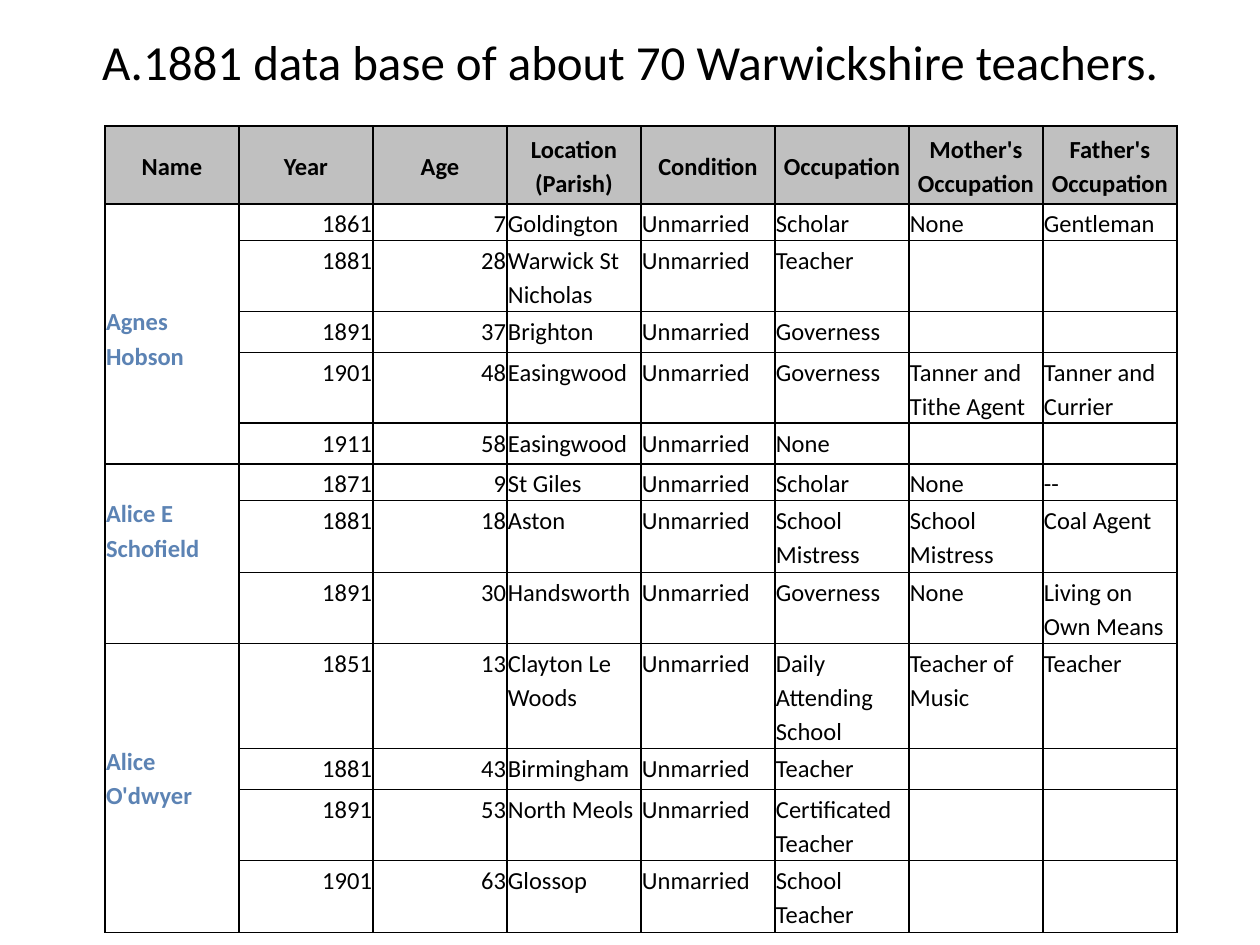
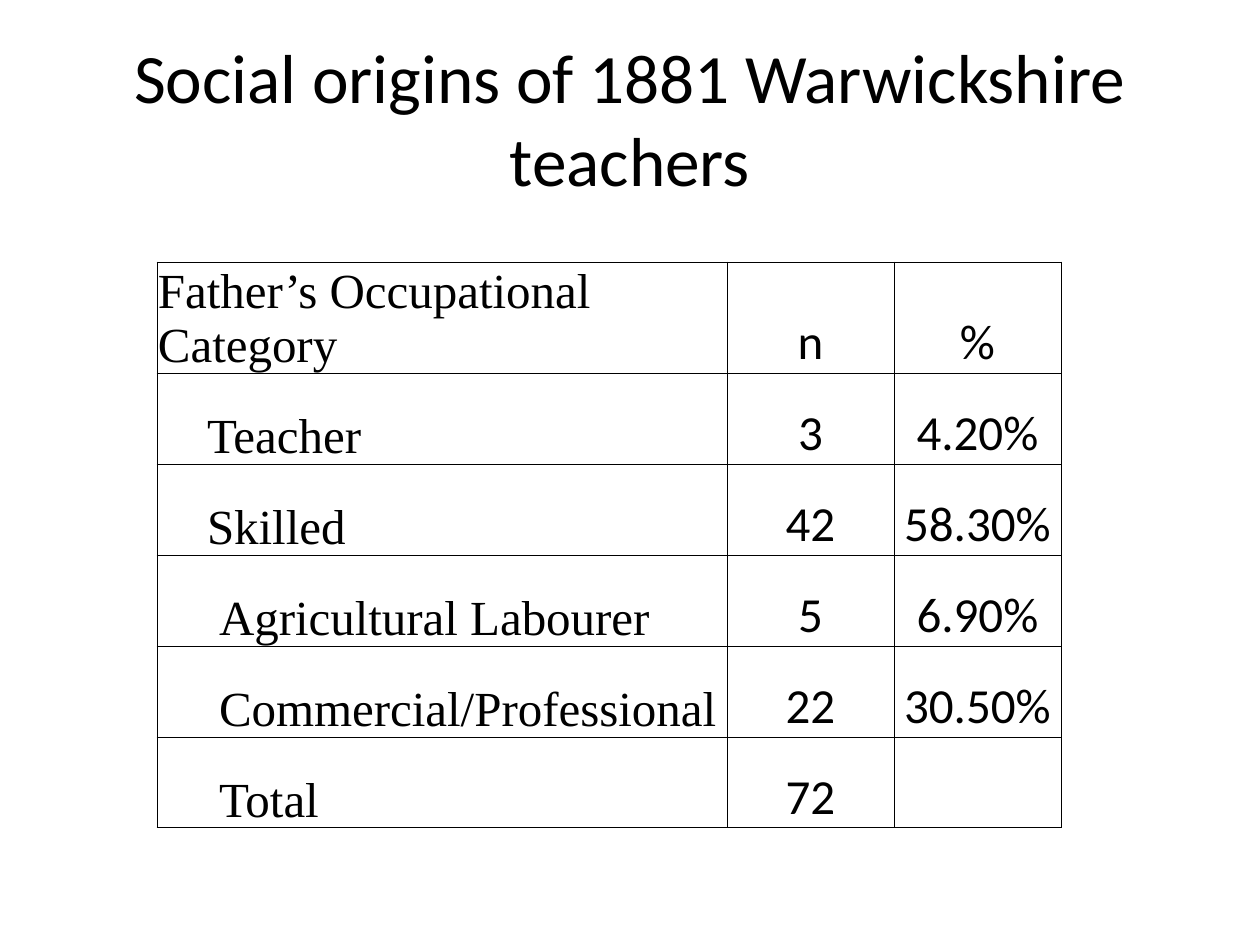
from dataclasses import dataclass

from lxml import etree
from pptx import Presentation
from pptx.dml.color import RGBColor
from pptx.enum.text import MSO_ANCHOR, MSO_AUTO_SIZE, PP_ALIGN
from pptx.oxml.ns import qn
from pptx.util import Pt

LEFT, CENTER, RIGHT = PP_ALIGN.LEFT, PP_ALIGN.CENTER, PP_ALIGN.RIGHT
TOP, MIDDLE, BOTTOM = MSO_ANCHOR.TOP, MSO_ANCHOR.MIDDLE, MSO_ANCHOR.BOTTOM
NO_AUTOFIT = MSO_AUTO_SIZE.NONE
EMU_PER_PX = 914400 / 126
TITLE_ONLY = 5


@dataclass(frozen=True)
class Theme:
    """Colours, fonts and type sizes of the deck."""
    ink: str = "000000"
    paper: str = "FFFFFF"
    header: str = "C0C0C0"
    teacher: str = "5C83B4"
    sans: str = "Calibri"
    serif: str = "Times New Roman"
    long_title: float = 28
    title: float = 39.6
    record: float = 14
    figure: float = 28
    record_spacing: float = 1.15
    record_border: float = 1
    figure_border: float = 0.5


THEME = Theme()

RECORD_HEADERS = ["Name", "Year", "Age", "Location (Parish)", "Condition",
                  "Occupation", "Mother's Occupation", "Father's Occupation"]
RECORD_ALIGNS = [LEFT, RIGHT, RIGHT] + [LEFT] * 5
CAREERS = [
    ("Agnes Hobson", 98, [
        ("1861", "7", "Goldington", "Unmarried", "Scholar", "None", "Gentleman"),
        ("1881", "28", "Warwick St Nicholas", "Unmarried", "Teacher", "", ""),
        ("1891", "37", "Brighton", "Unmarried", "Governess", "", ""),
        ("1901", "48", "Easingwood", "Unmarried", "Governess",
         "Tanner and Tithe Agent", "Tanner and Currier"),
        ("1911", "58", "Easingwood", "Unmarried", "None", "", ""),
    ]),
    ("Alice E Schofield", 30, [
        ("1871", "9", "St Giles", "Unmarried", "Scholar", "None", "--"),
        ("1881", "18", "Aston", "Unmarried", "School Mistress",
         "School Mistress", "Coal Agent"),
        ("1891", "30", "Handsworth", "Unmarried", "Governess", "None",
         "Living on Own Means"),
    ]),
    ("Alice O'dwyer", 98, [
        ("1851", "13", "Clayton Le Woods", "Unmarried",
         "Daily Attending School", "Teacher of Music", "Teacher"),
        ("1881", "43", "Birmingham", "Unmarried", "Teacher", "", ""),
        ("1891", "53", "North Meols", "Unmarried", "Certificated Teacher", "", ""),
        ("1901", "63", "Glossop", "Unmarried", "School Teacher", "", ""),
    ]),
]
RECORD_HEIGHTS = [78, 36, 71, 41, 71, 41, 36, 72, 71, 105, 41, 71, 72]

ORIGINS = [
    ("Father’s Occupational Category", 0, "n", "%"),
    ("Teacher", 49, "3", "4.20%"),
    ("Skilled", 49, "42", "58.30%"),
    ("Agricultural Labourer", 61, "5", "6.90%"),
    ("Commercial/Professional", 61, "22", "30.50%"),
    ("Total", 61, "72", ""),
]


def px(length):
    """Turn pixels into EMU."""
    return round(length * EMU_PER_PX)


def add_run(paragraph, text, size, font=THEME.sans, color=THEME.ink, bold=False):
    """Add one formatted run to a paragraph."""
    run = paragraph.add_run()
    run.text = text
    run.font.size = Pt(size)
    run.font.name = font
    run.font.bold = bold
    run.font.color.rgb = RGBColor.from_string(color)


def add_titled_slide(deck, title, size, box):
    """Add a title-only slide and set its title within the box."""
    slide = deck.slides.add_slide(deck.slide_layouts[TITLE_ONLY])
    heading = slide.shapes.title
    heading.left, heading.top, heading.width, heading.height = map(px, box)
    frame = heading.text_frame
    frame.word_wrap = True
    frame.auto_size = NO_AUTOFIT
    frame.vertical_anchor = MIDDLE
    paragraph = frame.paragraphs[0]
    paragraph.alignment = CENTER
    add_run(paragraph, title, size)
    return slide


def add_grid(slide, origin, widths, heights):
    """Add a plain table with the given column widths and row heights."""
    table = slide.shapes.add_table(
        len(heights), len(widths), px(origin[0]), px(origin[1]),
        px(sum(widths)), px(sum(heights))).table
    table.first_row = table.horz_banding = False
    for column, width in zip(table.columns, widths):
        column.width = px(width)
    for row, height in zip(table.rows, heights):
        row.height = px(height)
    return table


def style_cell(cell, border, anchor, fill=None, bottom=1):
    """Set borders, fill, margins and anchor of a cell."""
    cell.margin_left = cell.margin_right = cell.margin_top = px(1)
    cell.margin_bottom = px(bottom)
    cell.vertical_anchor = anchor
    properties = cell._tc.get_or_add_tcPr()
    for side in ("a:lnL", "a:lnR", "a:lnT", "a:lnB"):
        line = etree.SubElement(properties, qn(side), w=str(Pt(border)))
        solid = etree.SubElement(line, qn("a:solidFill"))
        etree.SubElement(solid, qn("a:srgbClr"), val=THEME.ink)
    if fill:
        cell.fill.solid()
        cell.fill.fore_color.rgb = RGBColor.from_string(fill)
    else:
        cell.fill.background()


def write_cell(cell, text, align, size, spacing=None, indent=0, **style):
    """Write one aligned, optionally indented paragraph into a cell."""
    paragraph = cell.text_frame.paragraphs[0]
    paragraph.alignment = align
    if spacing:
        paragraph.line_spacing = spacing
    if indent:
        paragraph._p.get_or_add_pPr().set("marL", str(px(indent)))
    if text:
        add_run(paragraph, text, size, **style)


def add_careers(slide, origin):
    """Place the census records, with one merged name cell per teacher."""
    table = add_grid(slide, origin, [134] * len(RECORD_HEADERS), RECORD_HEIGHTS)
    for row in range(len(RECORD_HEIGHTS)):
        for column in range(len(RECORD_HEADERS)):
            style_cell(table.cell(row, column), THEME.record_border,
                       TOP if row else MIDDLE,
                       THEME.paper if row else THEME.header)
    for column, header in enumerate(RECORD_HEADERS):
        write_cell(table.cell(0, column), header, CENTER, THEME.record,
                   THEME.record_spacing, bold=True)
    first = 1
    for teacher, drop, records in CAREERS:
        name = table.cell(first, 0)
        name.merge(table.cell(first + len(records) - 1, 0))
        name.margin_top = px(drop + 1)
        write_cell(name, teacher, LEFT, THEME.record, THEME.record_spacing,
                   color=THEME.teacher, bold=True)
        for row, record in enumerate(records, first):
            for column, entry in enumerate(record, 1):
                write_cell(table.cell(row, column), entry, RECORD_ALIGNS[column],
                           THEME.record, THEME.record_spacing)
        first += len(records)


def add_origins(slide, origin):
    """Place the counts and shares of fathers' occupational categories."""
    table = add_grid(slide, origin, [570, 167, 167], [111] + [91] * 5)
    for row, (category, indent, count, share) in enumerate(ORIGINS):
        for column in range(3):
            style_cell(table.cell(row, column), THEME.figure_border, BOTTOM, bottom=0)
        write_cell(table.cell(row, 0), category, LEFT, THEME.figure,
                   indent=indent, font=THEME.serif)
        for column, figure in enumerate((count, share), 1):
            write_cell(table.cell(row, column), figure, CENTER, THEME.figure)


def main():
    """Build and save the deck."""
    deck = Presentation()
    deck.slide_width, deck.slide_height = px(1260), px(945)
    careers = add_titled_slide(
        deck, "A.1881 data base of about 70 Warwickshire teachers.",
        THEME.long_title, (63, 32, 1134, 57))
    add_careers(careers, (105, 126))
    origins = add_titled_slide(
        deck, "Social origins of 1881 Warwickshire teachers",
        THEME.title, (63, 38, 1134, 158))
    add_origins(origins, (157, 262))
    deck.save("out.pptx")


if __name__ == "__main__":
    main()
